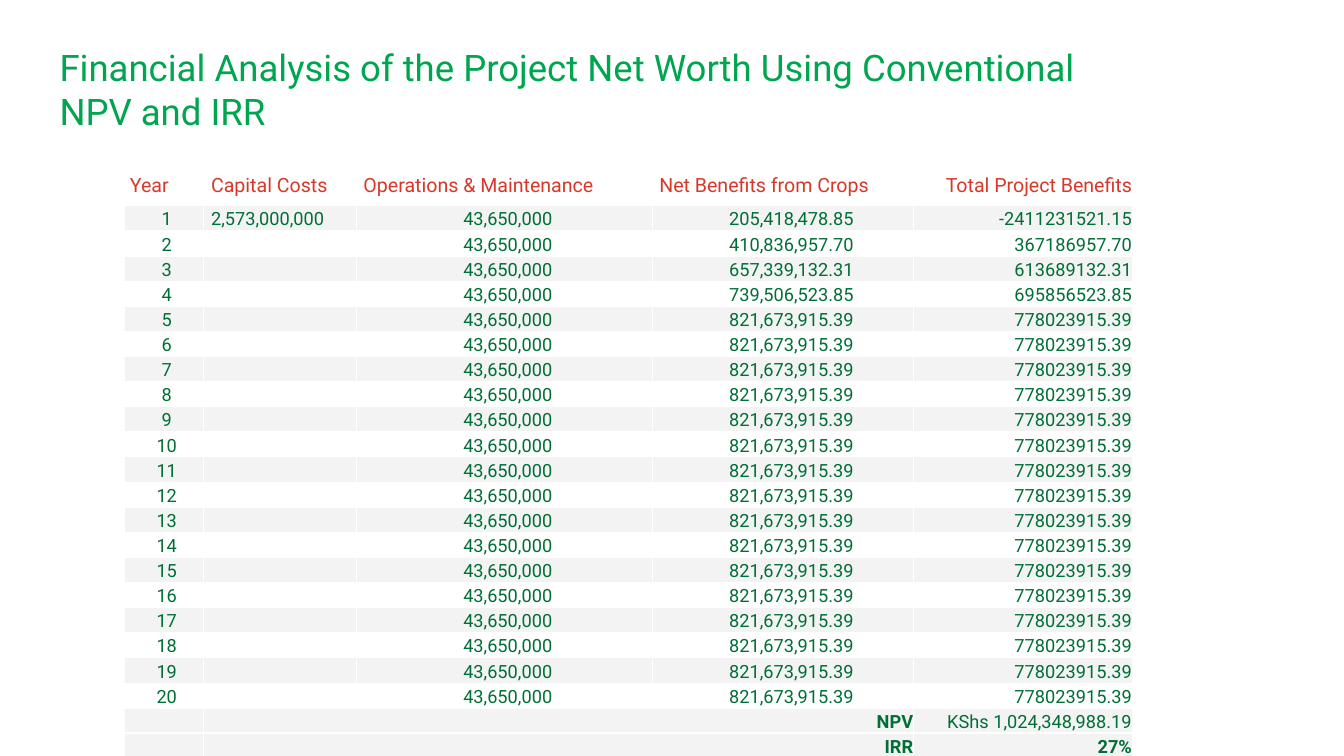
from dataclasses import dataclass

from lxml.etree import SubElement
from pptx import Presentation
from pptx.dml.color import RGBColor
from pptx.enum.text import MSO_ANCHOR, PP_ALIGN
from pptx.oxml.ns import qn
from pptx.util import Cm, Pt


@dataclass(frozen=True)
class Theme:
    font: str = "Roboto"
    title: str = "00A54F"
    header: str = "D83829"
    body: str = "006F35"
    band: str = "F3F3F3"
    plain: str = "FFFFFF"
    title_size: float = 52.2
    header_size: float = 28
    body_size: float = 26


T = Theme()
L, C, R = PP_ALIGN.LEFT, PP_ALIGN.CENTER, PP_ALIGN.RIGHT

# Columns: heading, width, left indent of body text (cm), heading and body alignment
COLUMNS = [
    ("Year", 4.01, 0.3, L, C),
    ("Capital Costs", 7.7, 0.38, L, L),
    ("Operations & Maintenance", 14.91, 0.36, L, C),
    ("Net Benefits from Crops", 13.16, 0.89, L, C),
    ("Total Project Benefits", 11.02, 0.36, R, R),
]
HEADER_INDENTS = [0.3, 0.38, 0.36, 0.36, 0.36]
HEADER_HEIGHT, ROW_HEIGHT = 2.13, 1.17

# Project cash flows over 20 years
CAPITAL, MAINTENANCE = 2_573_000_000, 43_650_000
BENEFITS = [205418478.85, 410836957.70, 657339132.31, 739506523.85] + [821673915.39] * 16
# Label, result, whether the result is bold
SUMMARY = [("NPV", "KShs 1,024,348,988.19", False), ("IRR", "27%", True)]


def write(tf, text, size, color, bold=False, align=L):
    p = tf.paragraphs[0]
    p.alignment = align
    r = p.add_run()
    r.text = text
    formats = {"name": T.font, "size": Pt(size), "bold": bold}
    for name, value in formats.items():
        setattr(r.font, name, value)
    r.font.color.rgb = RGBColor.from_string(color)
    return p


def style_cell(cell, fill, top=1, bottom=1):
    """Zero margins, white rules (points) and a solid fill."""
    formats = {"margin_left": 0, "margin_right": 0, "margin_top": 0,
               "margin_bottom": 0, "vertical_anchor": MSO_ANCHOR.MIDDLE}
    for name, value in formats.items():
        setattr(cell, name, value)
    tc_pr = cell._tc.get_or_add_tcPr()
    for side, width in (("L", 1), ("R", 1), ("T", top), ("B", bottom)):
        ln = SubElement(tc_pr, qn(f"a:ln{side}"), w=str(Pt(width)))
        SubElement(SubElement(ln, qn("a:solidFill")), qn("a:srgbClr"), val=T.plain)
    cell.fill.solid()
    cell.fill.fore_color.rgb = RGBColor.from_string(fill)


def write_cell(cell, text, indent, align, size=T.body_size, color=T.body, bold=False):
    p = write(cell.text_frame, text, size, color, bold, align)
    p.line_spacing = 1.15
    p._p.get_or_add_pPr().set("marL", str(Cm(indent)))


def yearly_rows():
    for year, benefit in enumerate(BENEFITS, 1):
        capital = CAPITAL if year == 1 else 0
        yield [str(year), f"{capital:,}" if capital else "", f"{MAINTENANCE:,}",
               f"{benefit:,.2f}", f"{benefit - MAINTENANCE - capital:.2f}"]


def add_title(s, left, top, width, height, text):
    tf = s.shapes.add_textbox(Cm(left), Cm(top), Cm(width), Cm(height)).text_frame
    tf.word_wrap = True
    for side in ("left", "right", "top", "bottom"):
        setattr(tf, f"margin_{side}", Cm(0.69))
    write(tf, text, T.title_size, T.title)


def add_cash_flow_table(s, left, top):
    years = list(yearly_rows())
    n_rows = 1 + len(years) + len(SUMMARY)
    width = sum(column[1] for column in COLUMNS)
    height = HEADER_HEIGHT + ROW_HEIGHT * (n_rows - 1)
    table = s.shapes.add_table(n_rows, len(COLUMNS), Cm(left), Cm(top),
                               Cm(width), Cm(height)).table
    table.first_row = table.horz_banding = False
    for col, column in zip(table.columns, COLUMNS):
        col.width = Cm(column[1])
    for i, row in enumerate(table.rows):
        row.height = Cm(ROW_HEIGHT if i else HEADER_HEIGHT)
        banded = i % 2 == 1 or i > len(years)
        for cell in row.cells:
            style_cell(cell, T.band if banded else T.plain,
                       top=3 if i == n_rows - 1 else 1, bottom=1 if i else 3)

    # Headings
    for j, (heading, _, _, align, _) in enumerate(COLUMNS):
        write_cell(table.cell(0, j), heading, HEADER_INDENTS[j], align,
                   T.header_size, T.header)

    # Years
    for i, values in enumerate(years, 1):
        for j, value in enumerate(values):
            if value:
                write_cell(table.cell(i, j), value, COLUMNS[j][2], COLUMNS[j][4])

    # Summary: label spans the three middle columns
    for i, (label, result, bold) in enumerate(SUMMARY, 1 + len(years)):
        table.cell(i, 1).merge(table.cell(i, 3))
        write_cell(table.cell(i, 1), label, COLUMNS[1][2], R, bold=True)
        write_cell(table.cell(i, 4), result, COLUMNS[4][2], R, bold=bold)


def main():
    prs = Presentation()
    prs.slide_width, prs.slide_height = Cm(67.74), Cm(38.1)
    s = prs.slides.add_slide(prs.slide_layouts[6])
    add_title(s, 2.31, 1.6, 52.96, 4.24,
              "Financial Analysis of the Project Net Worth Using Conventional NPV and IRR")
    add_cash_flow_table(s, 6.25, 8.23)
    prs.save("out.pptx")


if __name__ == "__main__":
    main()
